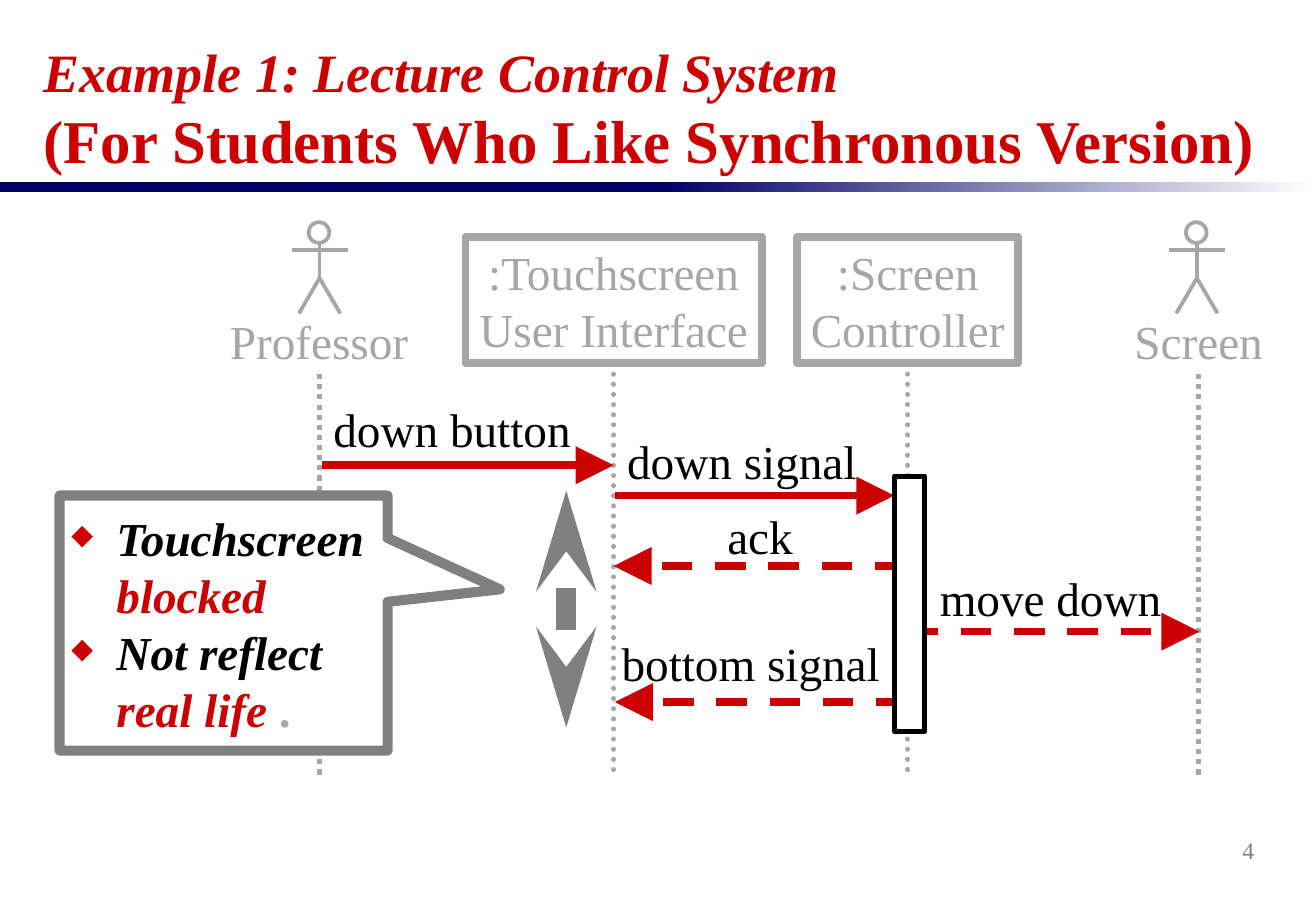
"""Build the lecture control sequence slide."""
from lxml import etree
from pptx import Presentation
from pptx.dml.color import RGBColor
from pptx.enum.dml import MSO_LINE
from pptx.enum.shapes import MSO_CONNECTOR, MSO_SHAPE
from pptx.enum.text import MSO_ANCHOR, PP_ALIGN
from pptx.oxml.ns import qn
from pptx.util import Inches, Pt

LINE = MSO_CONNECTOR.STRAIGHT
RECT, OVAL = MSO_SHAPE.RECTANGLE, MSO_SHAPE.OVAL
BUBBLE = MSO_SHAPE.RECTANGULAR_CALLOUT
DASH, DOT = MSO_LINE.DASH, MSO_LINE.ROUND_DOT
LEFT, MID, RIGHT = PP_ALIGN.LEFT, PP_ALIGN.CENTER, PP_ALIGN.RIGHT
FONT = "Times New Roman"
RED, NAVY, BLACK, WHITE = "CC0000", "000066", "000000", "FFFFFF"
PALE, GRAY = "A6A6A6", "808080"

TITLE = [("Example 1: Lecture Control System", 32, True),
         ("(For Students Who Like Synchronous Version)", 36, False)]
LIVES = [(2.63, "flat"), (5.05, "rnd"), (7.47, "rnd"), (9.86, "flat")]
ACTORS = [("Professor", 2.63, 1.79, 1.67), ("Screen", 9.85, 9.23, 1.27)]
PARTS = [(":Touchscreen\vUser Interface", 3.83, 2.44),
         (":Screen\vController", 6.56, 1.82)]
LIMBS = [(-0.17, 2.58, 0, 2.29), (0.17, 2.58, 0, 2.29),
         (0, 2.29, 0, 2.01), (-0.23, 2.06, 0.23, 2.06)]
CALLS = [(7.46, 5.06, 5.78, DASH), (7.47, 9.87, 5.2, DASH),
         (7.45, 5.05, 4.66, DASH), (5.06, 7.36, 4.08, None),
         (2.65, 5.05, 3.83, None)]
LABELS = [("down button", 2.63, 3.25, 2.18), ("down signal", 5.05, 3.51, 2.11),
          ("ack", 5.88, 4.13, 0.75), ("move down", 7.62, 4.64, 2.05)]
SIGNAL = [("bottom signal ", BLACK, False, False), (".", PALE, True, False)]
NOTES = [[("Touchscreen ", BLACK, True, True), ("blocked", RED, True, True)],
         [("Not reflect ", BLACK, True, True), ("real life ", RED, True, True),
          (".", PALE, True, False)]]


def tint(hue):
    return RGBColor.from_string(hue)


def style(run, size, hue, bold=False, slant=False):
    font = run.font
    font.name, font.size = FONT, Pt(size)
    font.bold, font.italic = bold, slant
    font.color.rgb = tint(hue)


def line(home, x1, y1, x2, y2, hue, width, dash=None, cap="flat", ends=()):
    item = home.add_connector(LINE, Inches(x1), Inches(y1), Inches(x2), Inches(y2))
    item.line.color.rgb = tint(hue)
    item.line.width = Pt(width)
    if dash:
        item.line.dash_style = dash
    edge = item.line._get_or_add_ln()
    edge.set("cap", cap)
    for tag, kind, wide in ends:
        etree.SubElement(edge, qn("a:" + tag), type=kind, w=wide, len="lg")
    etree.SubElement(item._element.spPr, qn("a:effectLst"))


def block(home, kind, x, y, w, h, fill=None, hue=None, width=1):
    item = home.add_shape(kind, Inches(x), Inches(y), Inches(w), Inches(h))
    item.shadow.inherit = False
    if fill:
        item.fill.solid()
        item.fill.fore_color.rgb = tint(fill)
    else:
        item.fill.background()
    if hue:
        item.line.color.rgb = tint(hue)
        item.line.width = Pt(width)
    else:
        item.line.fill.background()
    return item


def write(frame, text, hue, size=28, align=MID):
    frame.word_wrap = False
    frame.text = text
    para = frame.paragraphs[0]
    para.alignment = align
    for run in para.runs:
        style(run, size, hue)


def spans(para, parts):
    for text, hue, bold, slant in parts:
        run = para.add_run()
        run.text = text
        style(run, 28, hue, bold, slant)


def label(home, text, x, y, w, hue=BLACK):
    box = home.add_textbox(Inches(x), Inches(y), Inches(w), Inches(0.57))
    write(box.text_frame, text, hue)
    return box.text_frame


def bullet(para):
    props = para._p.get_or_add_pPr()
    indent = Inches(0.37)
    props.set("marL", str(indent))
    props.set("indent", str(-indent))
    color = etree.SubElement(props, qn("a:buClr"))
    etree.SubElement(color, qn("a:srgbClr"), val=RED)
    etree.SubElement(props, qn("a:buSzPct"), val="60000")
    etree.SubElement(props, qn("a:buChar"), char="◆")


def main():
    deck = Presentation()
    deck.slide_width, deck.slide_height = Inches(10.83), Inches(7.5)
    slide = deck.slides.add_slide(deck.slide_layouts[5])
    home = slide.shapes

    block(home, RECT, 0, 1.5, 5.42, 0.08, NAVY)
    fade = block(home, RECT, 5.41, 1.5, 5.42, 0.08).fill
    fade.gradient()
    fade.gradient_angle = 0
    for stop, hue, place in zip(fade.gradient_stops, (NAVY, WHITE), (0, 1)):
        stop.color.rgb = tint(hue)
        stop.position = place

    title = home.title
    title.left, title.top = Inches(0.26), Inches(0.29)
    title.width, title.height = Inches(10.3), Inches(1.21)
    frame = title.text_frame
    frame.vertical_anchor = MSO_ANCHOR.BOTTOM
    frame.text = "\v".join(text for text, _, _ in TITLE)
    frame.paragraphs[0].alignment = LEFT
    for run, (_, size, slant) in zip(frame.paragraphs[0].runs, TITLE):
        style(run, size, RED, True, slant)

    for x, cap in LIVES:
        line(home, x, 3.08, x, 6.38, PALE, 3, DOT, cap)
    for name, x, left, w in ACTORS:
        man = home.add_group_shape().shapes
        for x1, y1, x2, y2 in LIMBS:
            line(man, x + x1, y1, x + x2, y2, PALE, 2.25)
        block(man, OVAL, x - 0.09, 1.83, 0.17, 0.17, None, PALE, 2.25)
        label(home, name, left, 2.52, w, PALE)
    for text, x, w in PARTS:
        part = block(home, RECT, x, 1.95, w, 1.04, None, PALE, 4.5)
        write(part.text_frame, text, PALE)

    for x1, x2, y, dash in CALLS:
        line(home, x1, y, x2, y, RED, 4.5, dash, ends=[("tailEnd", "triangle", "lg")])
    for text, x, y, w in LABELS:
        label(home, text, x, y, w)
    spans(label(home, "", 5, 5.17, 2.55).paragraphs[0], SIGNAL)
    block(home, RECT, 7.36, 3.92, 0.25, 2.1, WHITE, BLACK, 3)

    note = block(home, BUBBLE, 0.49, 4.08, 2.7, 2.1, WHITE, GRAY, 6)
    note.adjustments[0], note.adjustments[1] = 0.842, -0.132
    frame = note.text_frame
    frame.word_wrap = True
    frame.vertical_anchor = MSO_ANCHOR.MIDDLE
    for i, parts in enumerate(NOTES):
        para = frame.add_paragraph() if i else frame.paragraphs[0]
        para.alignment = LEFT
        bullet(para)
        spans(para, parts)
    line(home, 4.66, 4.04, 4.66, 5.99, GRAY, 12,
         ends=[("headEnd", "stealth", "med"), ("tailEnd", "stealth", "med")])

    page = home.add_textbox(Inches(8.16), Inches(6.75), Inches(2.26), Inches(0.5))
    page.text_frame.vertical_anchor = MSO_ANCHOR.MIDDLE
    write(page.text_frame, "4", GRAY, 14, RIGHT)
    deck.save("out.pptx")


if __name__ == "__main__":
    main()
